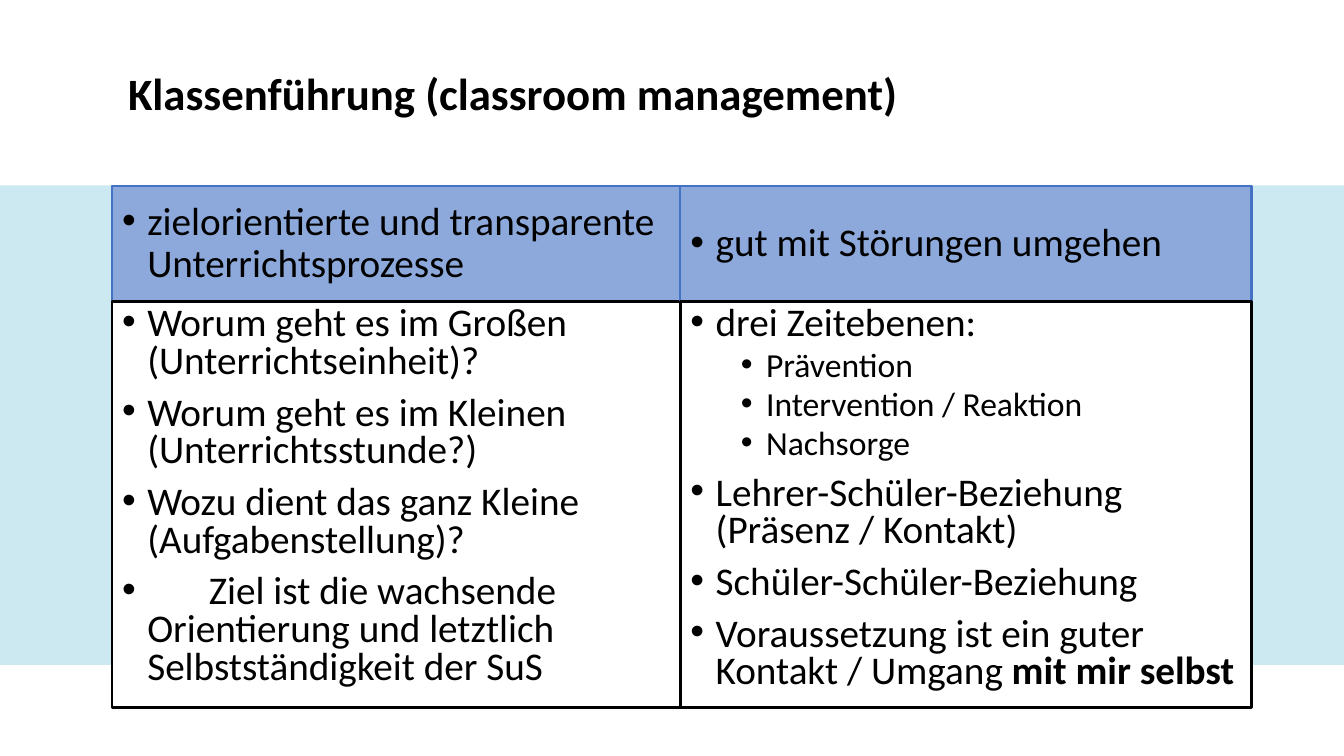
from lxml.etree import SubElement
from pptx import Presentation
from pptx.dml.color import RGBColor
from pptx.enum.shapes import MSO_SHAPE as Shape
from pptx.enum.text import MSO_ANCHOR as Anchor, MSO_AUTO_SIZE as AutoSize, PP_ALIGN as Align
from pptx.oxml.ns import qn
from pptx.util import Pt

COLORS = {"band": "CCE9F2", "header": "8DA9DB", "header_line": "4472C4",
          "body": "FFFFFF", "ink": "000000"}
WIDTH, HEIGHT = 960, 540
BAND = (0, 132.5, WIDTH, 342.5)
TITLE = (84.25, 26, 828, 80)
GRID_LEFT, GRID_TOP = 80, 133
COLUMN_WIDTHS = (406, 408)
HEADER_HEIGHT, BODY_HEIGHT = 82.5, 290
COMPARISON_LAYOUT = 4

HEADER = {"fill": "header", "line": "header_line", "weight": 1.5,
          "anchor": Anchor.MIDDLE, "spacing": 0.9}
BODY = {"fill": "body", "line": "ink", "weight": 1.75,
        "anchor": Anchor.TOP, "spacing": 0.8}
# Per list level: left margin, size, space before
LEVELS = ((18, 28, 10), (54, 24, 5))

# Each column: header, then items as (level, plain text, bold ending)
COLUMNS = (
    ("zielorientierte und transparente Unterrichtsprozesse",
     ((0, "Worum geht es im Großen (Unterrichtseinheit)?", ""),
      (0, "Worum geht es im Kleinen (Unterrichtsstunde?)", ""),
      (0, "Wozu dient das ganz Kleine (Aufgabenstellung)?", ""),
      (0, "\tZiel ist die wachsende Orientierung und letztlich "
          "Selbstständigkeit der SuS", ""))),
    ("gut mit Störungen umgehen",
     ((0, "drei Zeitebenen:", ""),
      (1, "Prävention", ""),
      (1, "Intervention / Reaktion", ""),
      (1, "Nachsorge", ""),
      (0, "Lehrer-Schüler-Beziehung (Präsenz / Kontakt)", ""),
      (0, "Schüler-Schüler-Beziehung", ""),
      (0, "Voraussetzung ist ein guter Kontakt / Umgang ", "mit mir selbst"))),
)


def color(name):
    return RGBColor.from_string(COLORS[name])


def place(shape, box):
    for side, value in zip(("left", "top", "width", "height"), box):
        setattr(shape, side, Pt(value))


def set_frame(frame, anchor):
    values = {"word_wrap": True, "auto_size": AutoSize.NONE, "vertical_anchor": anchor,
              "margin_left": Pt(7.2), "margin_right": Pt(7.2),
              "margin_top": Pt(3.6), "margin_bottom": Pt(3.6)}
    for name, value in values.items():
        setattr(frame, name, value)


def add_run(paragraph, text, size, bold=False):
    run = paragraph.add_run()
    run.text = text
    for name, value in {"name": "Calibri", "size": Pt(size), "bold": bold}.items():
        setattr(run.font, name, value)
    run.font.color.rgb = color("ink")


def add_bullet(paragraph, margin, tab_stop=None):
    props = paragraph._p.get_or_add_pPr()
    props.set("marL", str(Pt(margin)))
    props.set("indent", str(Pt(-18)))
    SubElement(SubElement(props, qn("a:buClr")), qn("a:srgbClr"), val=COLORS["ink"])
    SubElement(props, qn("a:buFont"), typeface="Arial")
    SubElement(props, qn("a:buChar"), char="•")
    if tab_stop:
        tabs = SubElement(props, qn("a:tabLst"))
        SubElement(tabs, qn("a:tab"), pos=str(Pt(tab_stop)), algn="l")


def band(slide, box):
    stripe = slide.shapes.add_shape(Shape.RECTANGLE, *map(Pt, box))
    stripe.shadow.inherit = False
    stripe.fill.solid()
    stripe.fill.fore_color.rgb = color("band")
    stripe.line.fill.background()
    # Send behind the placeholders
    slide.shapes._spTree.insert(2, stripe._element)


def heading(title, box, text):
    place(title, box)
    set_frame(title.text_frame, Anchor.MIDDLE)
    paragraph = title.text_frame.paragraphs[0]
    paragraph.alignment = Align.LEFT
    add_run(paragraph, text, 32, bold=True)


def panel(holder, box, items, style):
    place(holder, box)
    holder.fill.solid()
    holder.fill.fore_color.rgb = color(style["fill"])
    holder.line.color.rgb = color(style["line"])
    holder.line.width = Pt(style["weight"])
    frame = holder.text_frame
    set_frame(frame, style["anchor"])
    for row, (level, text, ending) in enumerate(items):
        margin, size, before = LEVELS[level]
        paragraph = frame.paragraphs[0] if row == 0 else frame.add_paragraph()
        add_bullet(paragraph, margin, 62 if text.startswith("\t") else None)
        values = {"level": level, "alignment": Align.LEFT,
                  "line_spacing": style["spacing"], "space_after": Pt(0),
                  "space_before": Pt(before if row else 0)}
        for name, value in values.items():
            setattr(paragraph, name, value)
        add_run(paragraph, text, size)
        if ending:
            add_run(paragraph, ending, size, bold=True)


def column(header_holder, body_holder, box, header, items):
    left, top, width, height = box
    panel(header_holder, (left, top, width, HEADER_HEIGHT), [(0, header, "")], HEADER)
    panel(body_holder, (left, top + HEADER_HEIGHT, width, height - HEADER_HEIGHT),
          items, BODY)


def classroom_slide(deck):
    slide = deck.slides.add_slide(deck.slide_layouts[COMPARISON_LAYOUT])
    holders = {holder.placeholder_format.idx: holder for holder in slide.placeholders}
    band(slide, BAND)
    heading(slide.shapes.title, TITLE, "Klassenführung (classroom management)")
    left = GRID_LEFT
    for number, (width, (header, items)) in enumerate(zip(COLUMN_WIDTHS, COLUMNS)):
        box = (left, GRID_TOP, width, HEADER_HEIGHT + BODY_HEIGHT)
        column(holders[2 * number + 1], holders[2 * number + 2], box, header, items)
        left += width


def main():
    deck = Presentation()
    deck.slide_width, deck.slide_height = Pt(WIDTH), Pt(HEIGHT)
    classroom_slide(deck)
    deck.save("out.pptx")


if __name__ == "__main__":
    main()
